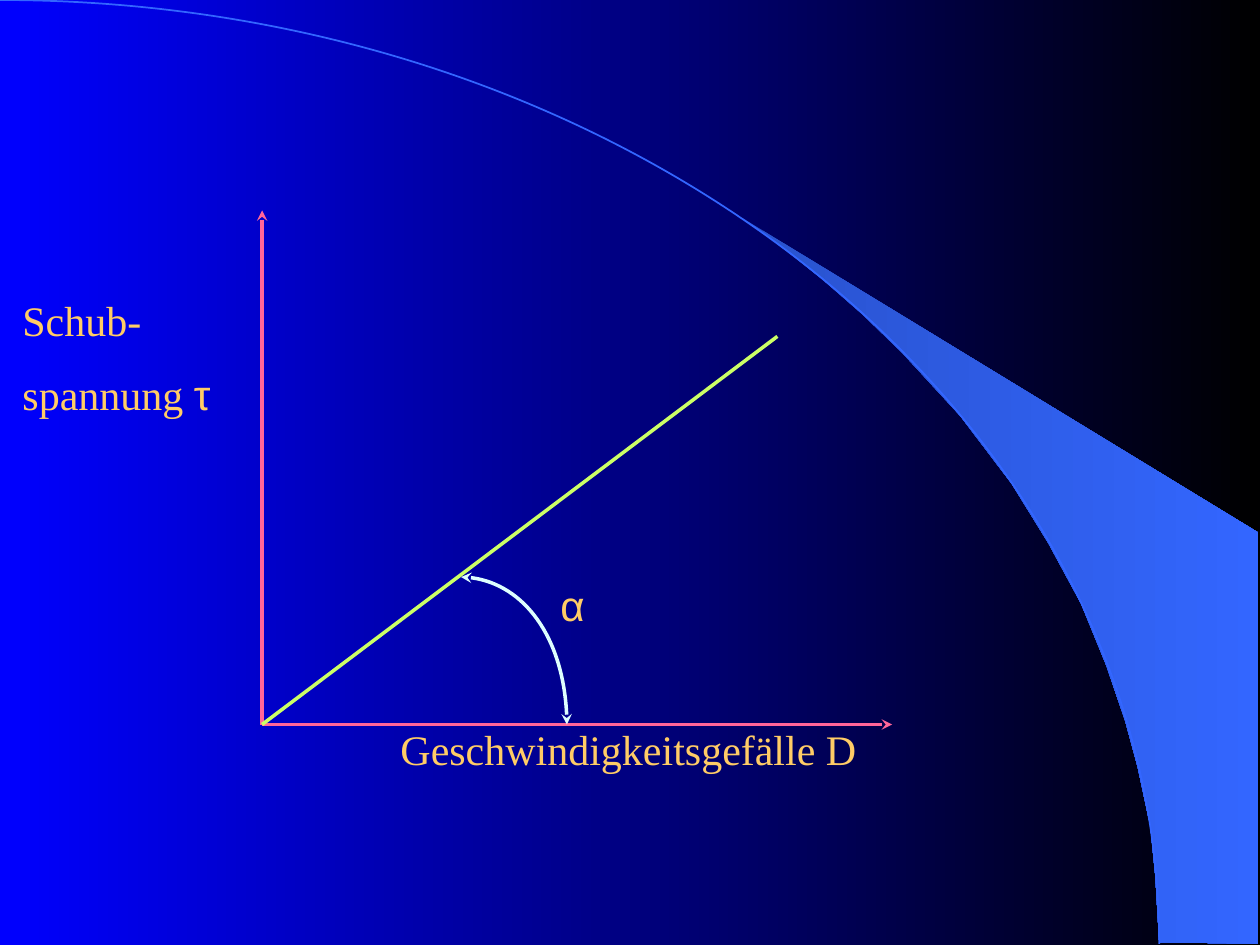
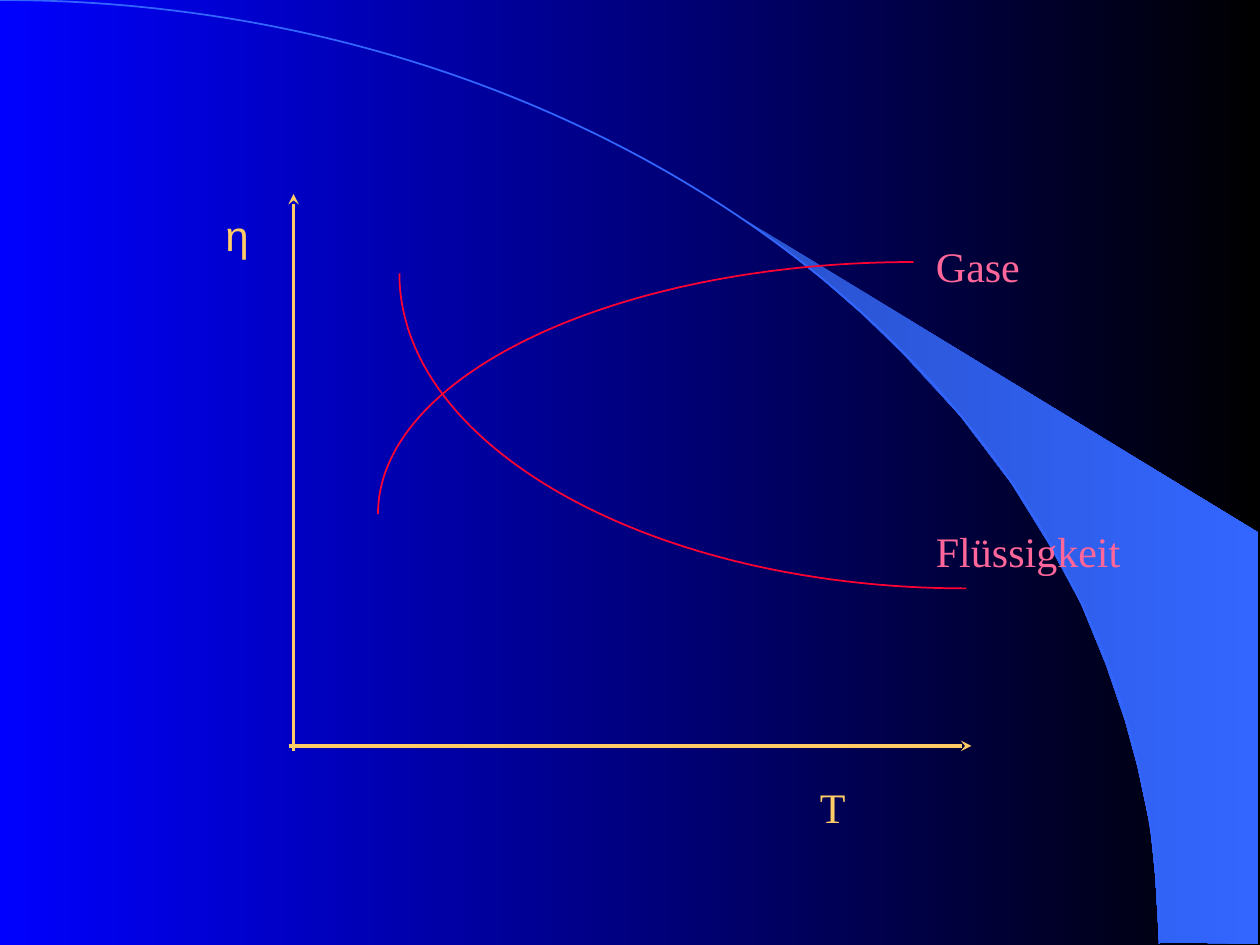
from itertools import groupby

from lxml.etree import SubElement
from pptx import Presentation
from pptx.dml.color import RGBColor
from pptx.enum.shapes import MSO_CONNECTOR as Connector
from pptx.oxml.ns import qn
from pptx.util import Inches, Pt

COLORS = {
    "blue": "0000FF",
    "black": "000000",
    "band_dark": "2952CC",
    "band": "3366FF",
    "pink": "FF6699",
    "gold": "FFCC66",
    "lime": "CCFF66",
    "ice": "DEFFFF",
    "red": "FF0033",
}
LATIN_FONT, GREEK_FONT = "Times New Roman", "Arial"
ARC_RATIO = 0.5523
BAND_OUTLINE = [
    (9.2, 7.48), (9.99, 7.49), (9.99, 4.23), (5.89, 1.73), (6.24, 1.99),
    (6.53, 2.22), (6.85, 2.5), (7.16, 2.8), (7.62, 3.3), (8.03, 3.84),
    (8.32, 4.31), (8.58, 4.79), (8.78, 5.28), (8.93, 5.72), (9.03, 6.09),
    (9.13, 6.56), (9.17, 6.96),
]


def rgb(name):
    """Return the named colour."""
    return RGBColor.from_string(COLORS[name])


def fill_gradient(fill, *names):
    """Fill with a left-to-right gradient between two named colours."""
    fill.gradient()
    fill.gradient_angle = 0
    for stop, name in zip(fill.gradient_stops, names):
        stop.color.rgb = rgb(name)


def style_line(shape, color, width, ends=()):
    """Colour a line and put stealth arrowheads on the given ends."""
    shape.line.color.rgb = rgb(color)
    shape.line.width = Pt(width)
    outline = shape._element.spPr.find(qn("a:ln"))
    for end in ends:
        SubElement(outline, qn(f"a:{end}"), type="stealth")


def add_line(page, start, end, color, ends=()):
    """Draw a straight line between two points."""
    points = [Inches(value) for value in (*start, *end)]
    line = page.shapes.add_connector(Connector.STRAIGHT, *points)
    style_line(line, color, 2, ends)
    SubElement(line._element.spPr, qn("a:effectLst"))


def add_outline(page, points, close):
    """Build a shadowless freeform through the points."""
    start, *rest = [(Inches(x), Inches(y)) for x, y in points]
    builder = page.shapes.build_freeform(*start)
    builder.add_line_segments(rest, close=close)
    shape = builder.convert_to_shape()
    shape.shadow.inherit = False
    return shape


def add_quarter_arc(page, start, end, color, width=1, ends=()):
    """Draw a quarter ellipse that leaves start horizontally and meets end vertically."""
    shape = add_outline(page, [start, end], close=False)
    shape.fill.background()
    (x0, y0), (x1, y1) = start, end
    left, top = min(x0, x1), min(y0, y1)
    controls = [
        (x0 + ARC_RATIO * (x1 - x0), y0),
        (x1, y1 - ARC_RATIO * (y1 - y0)),
        end,
    ]
    segment = next(shape._element.iter(qn("a:lnTo")))
    curve = segment.getparent()
    curve.remove(segment)
    bezier = SubElement(curve, qn("a:cubicBezTo"))
    for x, y in controls:
        SubElement(bezier, qn("a:pt"), x=str(Inches(x - left)), y=str(Inches(y - top)))
    style_line(shape, color, width, ends)


def add_label(page, text, left, top, width=1, color="gold", size=24, gap=13.5):
    """Write lines of text, with Greek letters in their own font."""
    lines = text.split("\n")
    box = page.shapes.add_textbox(
        Inches(left), Inches(top), Inches(width), Inches(0.48 + 0.57 * (len(lines) - 1))
    )
    frame = box.text_frame
    frame.word_wrap = True
    for index, line in enumerate(lines):
        para = frame.add_paragraph() if index else frame.paragraphs[0]
        para.space_before = Pt(gap if index else 0)
        for greek, letters in groupby(line, lambda letter: "α" <= letter <= "ω"):
            span = para.add_run()
            span.text = "".join(letters)
            span.font.name = GREEK_FONT if greek else LATIN_FONT
            span.font.size = Pt(size)
            span.font.color.rgb = rgb(color)


def add_axes(page, corner, top, right, color, overhang=0):
    """Draw two arrows that cross near the corner."""
    x, y = corner
    add_line(page, (x, y + overhang), (x, top), color, ["tailEnd"])
    add_line(page, (x - overhang, y), (right, y), color, ["tailEnd"])


def add_page(deck):
    """Add a blank slide with the sweeping blue band."""
    page = deck.slides.add_slide(deck.slide_layouts[6])
    band = add_outline(page, BAND_OUTLINE, close=True)
    fill_gradient(band.fill, "band_dark", "band")
    band.line.fill.background()
    add_quarter_arc(page, (0, 0), (9.2, 7.49), "band")
    return page


def build_shear_page(deck):
    """Plot shear stress against the velocity gradient."""
    page = add_page(deck)
    origin = (2.08, 5.75)
    add_axes(page, origin, 1.67, 7.08, "pink")
    add_line(page, origin, (6.17, 2.67), "lime")
    add_label(page, "Schub-\nspannung τ", 0.08, 2.29, width=1.9)
    add_label(page, "α", 4.35, 4.55)
    add_label(page, "Geschwindigkeitsgefälle D", 3.08, 5.69, width=4.2)
    add_quarter_arc(page, (3.66, 4.58), (4.5, 5.75), "ice", 2, ["headEnd", "tailEnd"])


def build_viscosity_page(deck):
    """Plot the viscosity of gases and liquids against temperature."""
    page = add_page(deck)
    add_axes(page, (2.33, 5.92), 1.54, 7.71, "gold", overhang=0.04)
    add_label(page, "η", 1.69, 1.61, width=0.6)
    add_label(page, "T", 6.41, 6.15)
    add_quarter_arc(page, (7.25, 2.08), (3, 4.08), "red")
    add_quarter_arc(page, (7.67, 4.67), (3.17, 2.17), "red")
    add_label(page, "Gase", 7.33, 1.86, width=1.83, color="pink")
    add_label(page, "Flüssigkeit", 7.33, 4.12, width=1.83, color="pink")


def main():
    """Build and save the deck."""
    deck = Presentation()
    deck.slide_width, deck.slide_height = Inches(10), Inches(7.5)
    fill_gradient(deck.slide_master.background.fill, "blue", "black")
    build_shear_page(deck)
    build_viscosity_page(deck)
    deck.save("out.pptx")


if __name__ == "__main__":
    main()
